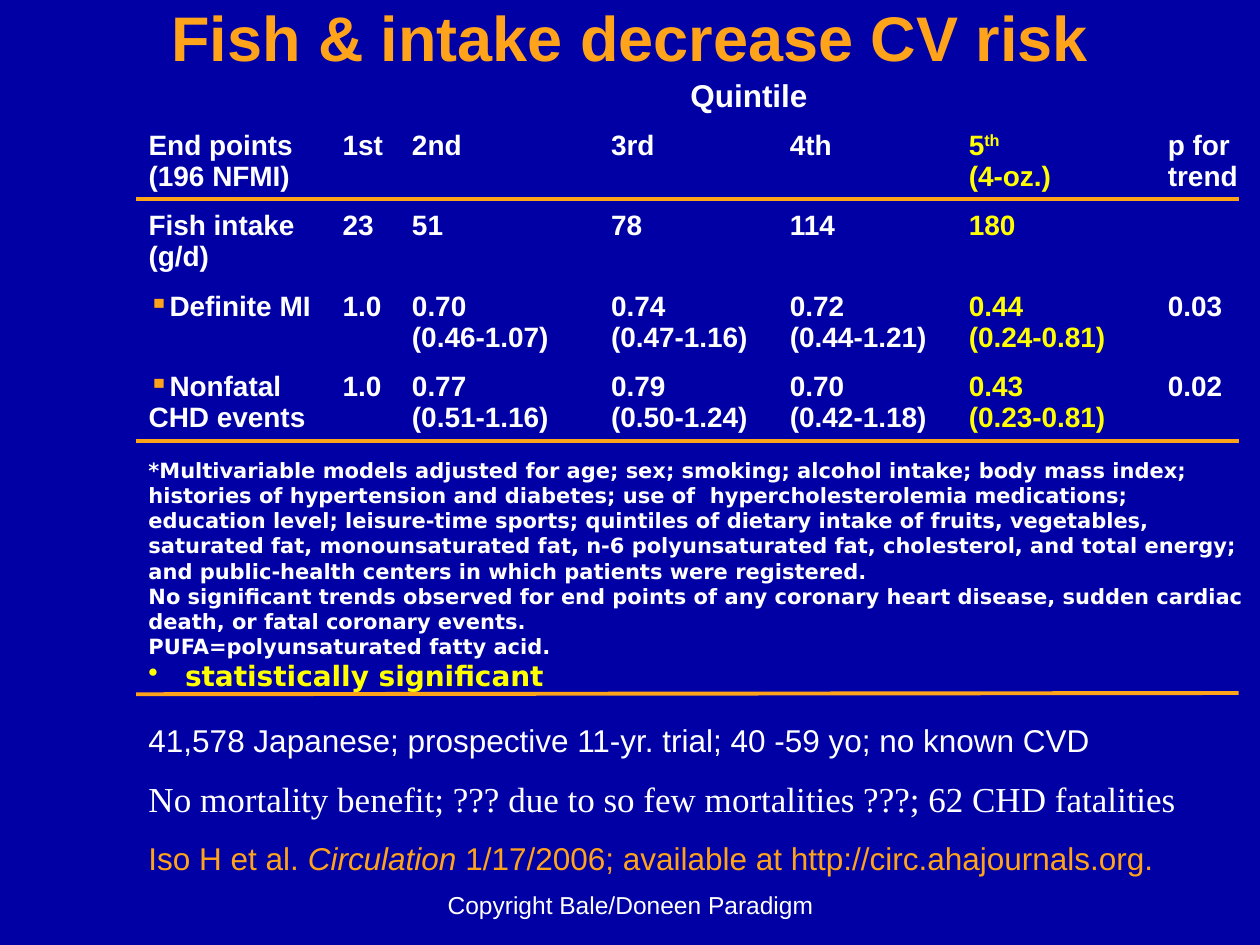
"""Build the slide on fish intake quintiles and cardiovascular risk."""
from lxml.etree import SubElement
from pptx import Presentation
from pptx.dml.color import RGBColor
from pptx.enum.shapes import MSO_CONNECTOR as Connector
from pptx.enum.text import MSO_ANCHOR as Anchor, PP_ALIGN as Align
from pptx.oxml.ns import qn
from pptx.util import Inches, Pt

COLORS = {"background": "0000A4", "accent": "FFA31B", "text": "FFFFFF", "highlight": "FFFF00"}
NO_GRID_STYLE = "{2D5ABB26-0587-4C30-8999-92F81FD0307C}"

TITLE = "Fish & intake decrease CV risk"
COPYRIGHT = "Copyright Bale/Doneen Paradigm"
ROWS = [
    ["", "Quintile", "", "", "", "", ""],
    ["End points\n(196 NFMI)", "1st", "2nd", "3rd", "4th", "5^th\n(4-oz.)", "p for trend"],
    ["Fish intake (g/d)", "23", "51", "78", "114", "180", ""],
    ["Definite MI", "1.0", "0.70\n(0.46-1.07)", "0.74\n(0.47-1.16)",
     "0.72\n(0.44-1.21)", "0.44\n(0.24-0.81)", "0.03"],
    ["Nonfatal CHD events", "1.0", "0.77\n(0.51-1.16)", "0.79\n(0.50-1.24)",
     "0.70\n(0.42-1.18)", "0.43\n(0.23-0.81)", "0.02"],
]
COLUMN_WIDTHS = [1.54, 0.55, 1.58, 1.42, 1.42, 1.58, 0.83]
ROW_HEIGHTS = [0.4, 0.64, 0.64, 0.64, 0.8]
HIGHLIGHT_COLUMN = 5
BULLET_ROWS = (3, 4)
NOTES = [
    "*Multivariable models adjusted for age; sex; smoking; alcohol intake; body mass index; "
    "histories of hypertension and diabetes; use of  hypercholesterolemia medications; "
    "education level; leisure-time sports; quintiles of dietary intake of fruits, vegetables, "
    "saturated fat, monounsaturated fat, n-6 polyunsaturated fat, cholesterol, and total energy; "
    "and public-health centers in which patients were registered.",
    "No significant trends observed for end points of any coronary heart disease, "
    "sudden cardiac death, or fatal coronary events.",
    "PUFA=polyunsaturated fatty acid.",
]
SIGNIFICANCE = "statistically significant"
STUDY = [
    (["41,578 Japanese; prospective 11-yr. trial; 40 -59 yo; no known CVD"], 18, "Arial", "text"),
    (["No mortality benefit; ??? due to so few mortalities ???; 62 CHD fatalities"],
     20, "Times New Roman", "text"),
    (["Iso H et al. ", "Circulation", " 1/17/2006; available at http://circ.ahajournals.org."],
     18, "Arial", "accent"),
]
JOURNAL = "Circulation"
LEFT, RULE_RIGHT, BODY_WIDTH = 1.08, 9.83, 8.92
RULES = [(1.58, 1.58), (3.5, 3.5), (5.51, 5.5)]


def rgb(name):
    return RGBColor.from_string(COLORS[name])


def add_run(paragraph, text, size, color, font="Arial", bold=False):
    run = paragraph.add_run()
    run.text = text
    run.font.size, run.font.name, run.font.bold = Pt(size), font, bold
    run.font.color.rgb = rgb(color)
    return run


def add_bullet(paragraph, character, color, hanging=0):
    properties = paragraph._p.get_or_add_pPr()
    properties.set("marL", str(Inches(hanging)))
    properties.set("indent", str(-Inches(hanging)))
    SubElement(SubElement(properties, qn("a:buClr")), qn("a:srgbClr"), val=COLORS[color])
    SubElement(properties, qn("a:buChar"), char=character)


def add_text_box(slide, left, top, width, height, anchor=Anchor.TOP):
    box = slide.shapes.add_textbox(Inches(left), Inches(top), Inches(width), Inches(height))
    box.text_frame.word_wrap = True
    box.text_frame.vertical_anchor = anchor
    return box.text_frame


def next_paragraph(frame, index):
    return frame.add_paragraph() if index else frame.paragraphs[0]


def add_centered_line(slide, position, anchor, text, size, color, bold=False):
    paragraph = add_text_box(slide, *position, anchor).paragraphs[0]
    paragraph.alignment = Align.CENTER
    add_run(paragraph, text, size, color, bold=bold)


def fill_cell(cell, text, row, column):
    cell.fill.background()
    cell.margin_right = 0
    color = "highlight" if column == HIGHLIGHT_COLUMN else "text"
    for index, line in enumerate(text.split("\n") if text else []):
        paragraph = next_paragraph(cell.text_frame, index)
        if row == 0:
            paragraph.alignment = Align.CENTER
        if row in BULLET_ROWS and column == 0:
            add_bullet(paragraph, "▪", "accent")
        base, _, raised = line.partition("^")
        add_run(paragraph, base, 16 if row else 18, color, bold=True)
        if raised:
            run = add_run(paragraph, raised, 16, color, bold=True)
            run.font._element.set("baseline", "30000")


def add_results_table(slide):
    table = slide.shapes.add_table(
        len(ROWS), len(COLUMN_WIDTHS), Inches(LEFT), Inches(0.58),
        Inches(BODY_WIDTH), Inches(sum(ROW_HEIGHTS))).table
    table.first_row = table.horz_banding = False
    table._tbl.tblPr.find(qn("a:tableStyleId")).text = NO_GRID_STYLE
    for column, width in zip(table.columns, COLUMN_WIDTHS):
        column.width = Inches(width)
    for row, height in zip(table.rows, ROW_HEIGHTS):
        row.height = Inches(height)
    table.cell(0, 1).merge(table.cell(0, 5))
    for row, texts in enumerate(ROWS):
        for column, text in enumerate(texts):
            fill_cell(table.cell(row, column), text, row, column)


def add_rule(slide, start, end):
    line = slide.shapes.add_connector(
        Connector.STRAIGHT, Inches(LEFT), Inches(start), Inches(RULE_RIGHT), Inches(end))
    line.line.color.rgb = rgb("accent")
    line.line.width = Pt(2.25)
    SubElement(line._element.spPr, qn("a:effectLst"))


def add_notes_text(slide):
    frame = add_text_box(slide, LEFT, 3.58, BODY_WIDTH, 1.97)
    for index, text in enumerate(NOTES):
        add_run(next_paragraph(frame, index), text, 12, "text", "DejaVu Sans", True)
    paragraph = frame.add_paragraph()
    add_bullet(paragraph, "•", "highlight", 0.29)
    add_run(paragraph, SIGNIFICANCE, 16, "highlight", "DejaVu Sans", True)


def add_study_text(slide):
    frame = add_text_box(slide, LEFT, 5.67, BODY_WIDTH, 1.35)
    for index, (parts, size, font, color) in enumerate(STUDY):
        paragraph = next_paragraph(frame, index)
        if index:
            paragraph.space_before = Pt(11)
        for part in parts:
            add_run(paragraph, part, size, color, font).font.italic = part == JOURNAL


def main():
    presentation = Presentation()
    presentation.slide_width, presentation.slide_height = Inches(10), Inches(7.5)
    slide = presentation.slides.add_slide(presentation.slide_layouts[6])
    slide.background.fill.solid()
    slide.background.fill.fore_color.rgb = rgb("background")
    add_centered_line(slide, (3.42, 6.83, 3.17, 0.52), Anchor.BOTTOM, COPYRIGHT, 14, "text")
    add_centered_line(slide, (0, 0, 10, 0.58), Anchor.MIDDLE, TITLE, 36, "accent", True)
    add_study_text(slide)
    add_results_table(slide)
    add_notes_text(slide)
    for start, end in RULES:
        add_rule(slide, start, end)
    presentation.save("out.pptx")


if __name__ == "__main__":
    main()
